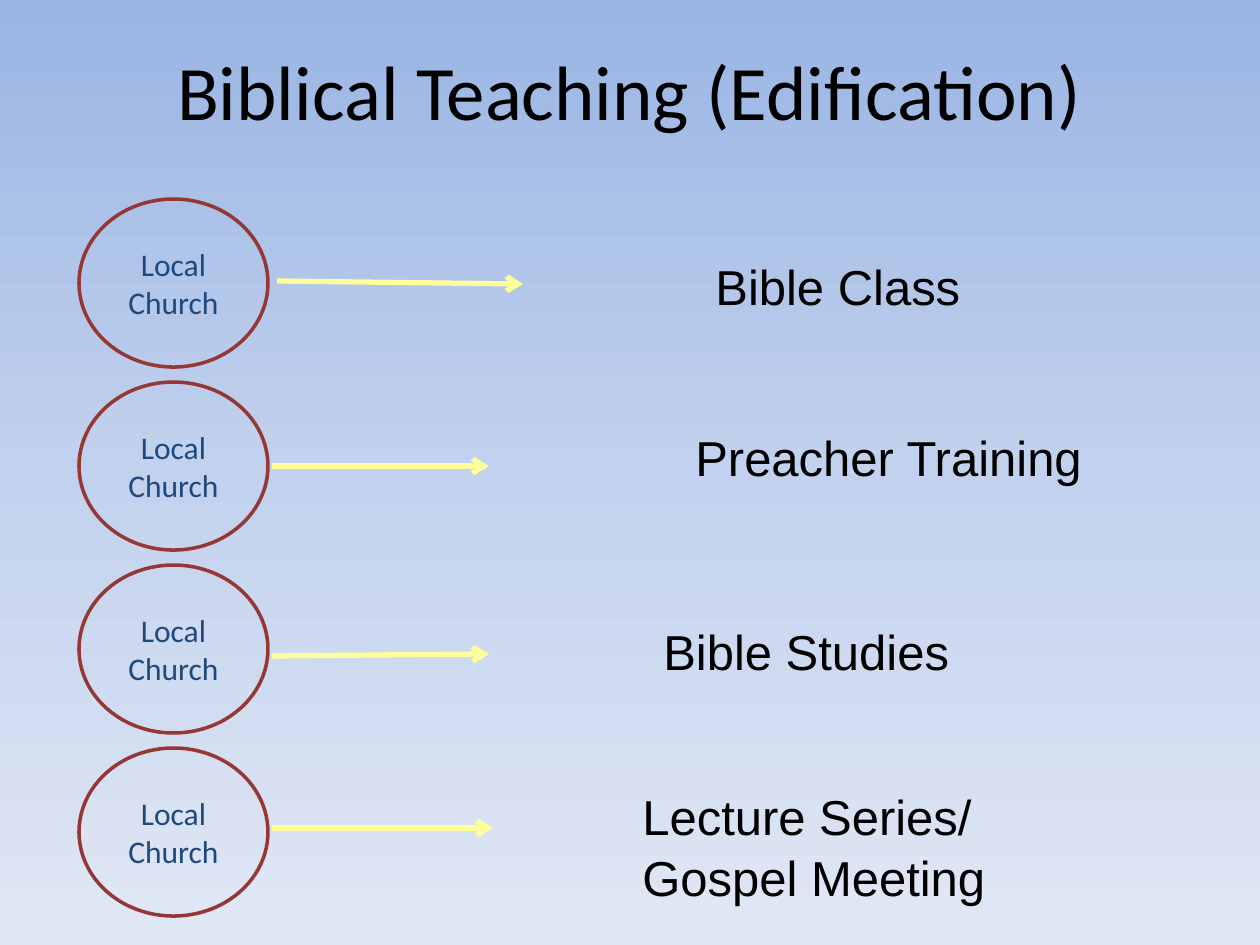
from copy import deepcopy

from pptx import Presentation
from pptx.dml.color import RGBColor
from pptx.enum.shapes import MSO_CONNECTOR, MSO_SHAPE
from pptx.enum.text import MSO_ANCHOR, PP_ALIGN
from pptx.oxml.ns import qn
from pptx.util import Emu, Pt
from lxml.etree import SubElement

BLACK = RGBColor(0x00, 0x00, 0x00)
NAVY = RGBColor(0x1F, 0x49, 0x7D)
MAROON = RGBColor(0x95, 0x37, 0x35)
YELLOW = RGBColor(0xFF, 0xFF, 0x99)
SKY = [
    (0, RGBColor(0x9A, 0xB5, 0xE4)),
    (0.5, RGBColor(0xC2, 0xD1, 0xED)),
    (1, RGBColor(0xE1, 0xE8, 0xF5)),
]

ROW_LEFT, ROW_TOP, ROW_PITCH = 79, 199, 183
CIRCLE_W, CIRCLE_H = 189, 168

# label, label box, arrow start, arrow end; all relative to the row
ROWS = [
    ("Bible Class", (624, 48, 420, 72), (198, 82), (444, 85)),
    ("Preacher Training", (604, 36, 420, 72), (193, 84), (410, 84)),
    ("Bible Studies", (572, 47, 620, 72), (193, 91), (410, 89)),
    ("Lecture Series/ Gospel Meeting", (551, 29, 420, 131), (193, 80), (414, 80)),
]


def px(n):
    return Emu(round(n * 914400 / 126))


def write(tf, text, size, font, color, align=PP_ALIGN.LEFT,
          anchor=MSO_ANCHOR.TOP, spacing=1.0):
    tf.word_wrap = True
    tf.vertical_anchor = anchor
    for i, line in enumerate(text.split("\n")):
        p = tf.add_paragraph() if i else tf.paragraphs[0]
        p.alignment = align
        p.line_spacing = spacing
        r = p.add_run()
        r.text = line
        r.font.size = Pt(size)
        r.font.name = font
        r.font.color.rgb = color


def paint_background(s):
    fill = s.background.fill
    fill.gradient()
    fill.gradient_angle = 270
    stops = s.element.find(".//" + qn("a:gsLst"))
    stops.append(deepcopy(stops[0]))
    for stop, (position, color) in zip(fill.gradient_stops, SKY):
        stop.position = position
        stop.color.rgb = color


def add_title(s, x, y, w, h):
    sp = s.shapes.add_textbox(px(x), px(y), px(w), px(h))
    write(sp.text_frame, "Biblical Teaching (Edification)", 44, "Calibri", BLACK,
          align=PP_ALIGN.CENTER)


def add_circle(s, x, y):
    sp = s.shapes.add_shape(MSO_SHAPE.OVAL, px(x), px(y), px(CIRCLE_W), px(CIRCLE_H))
    sp.shadow.inherit = False
    sp.fill.background()
    sp.line.color.rgb = MAROON
    sp.line.width = Pt(2)
    write(sp.text_frame, "Local\nChurch", 18, "Calibri", NAVY,
          align=PP_ALIGN.CENTER, anchor=MSO_ANCHOR.MIDDLE)


def add_arrow(s, x, y, start, end):
    sp = s.shapes.add_connector(
        MSO_CONNECTOR.STRAIGHT,
        px(x + start[0]), px(y + start[1]), px(x + end[0]), px(y + end[1]))
    sp.line.color.rgb = YELLOW
    sp.line.width = Pt(3)
    SubElement(sp.line._get_or_add_ln(), qn("a:tailEnd"), type="arrow")
    SubElement(sp._element.spPr, qn("a:effectLst"))


def add_row(s, x, y, label, box, start, end):
    add_circle(s, x, y)
    add_arrow(s, x, y, start, end)
    dx, dy, w, h = box
    sp = s.shapes.add_textbox(px(x + dx), px(y + dy), px(w), px(h))
    write(sp.text_frame, label, 28, "Arial", BLACK, spacing=1.05)


def main():
    prs = Presentation()
    prs.slide_width, prs.slide_height = px(1260), px(945)
    s = prs.slides.add_slide(prs.slide_layouts[6])
    paint_background(s)
    add_title(s, 94, 37, 1071, 94)
    for i, row in enumerate(ROWS):
        add_row(s, ROW_LEFT, ROW_TOP + i * ROW_PITCH, *row)
    prs.save("out.pptx")


if __name__ == "__main__":
    main()
